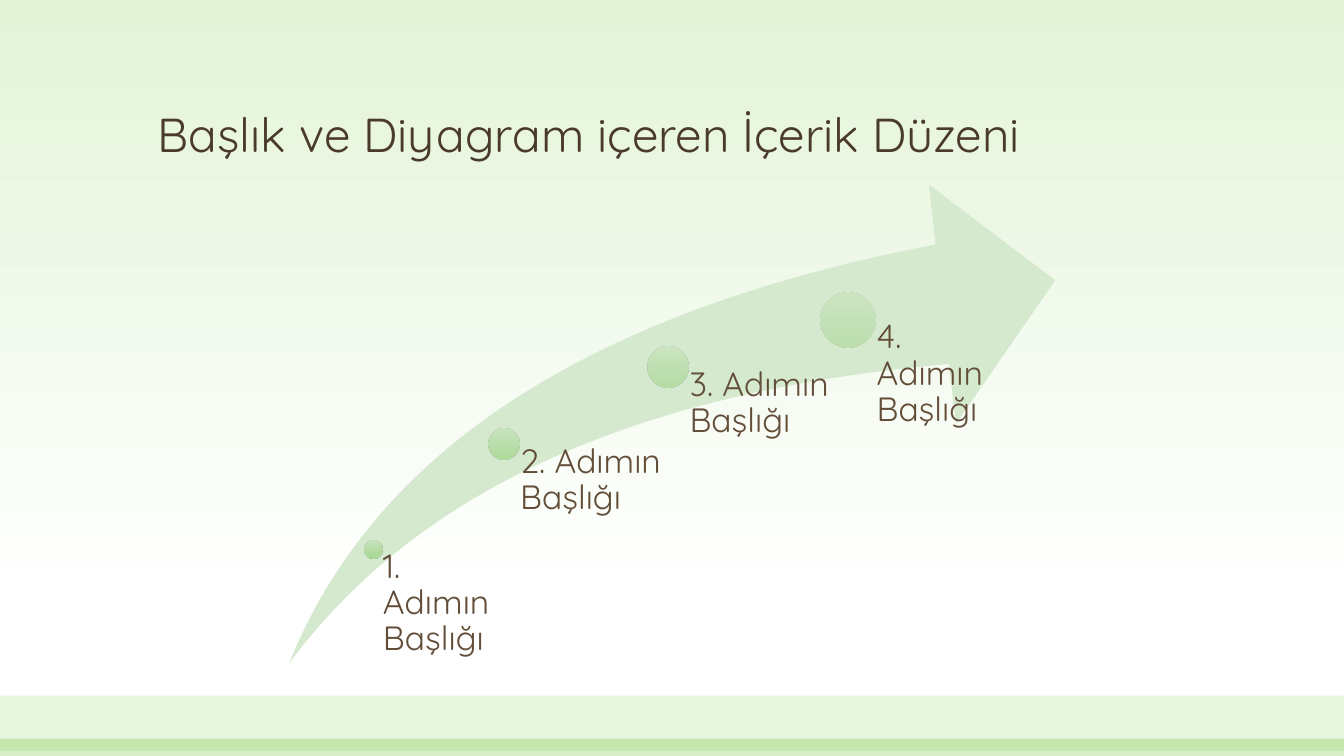
"""Builds a slide with a rising arrow that carries four step headings."""
import copy

import pptx
import pptx.dml.color
import pptx.enum.shapes
import pptx.enum.text
import pptx.oxml.ns
import pptx.util
from lxml import etree

Pt = pptx.util.Pt
RGBColor = pptx.dml.color.RGBColor
SHAPE = pptx.enum.shapes.MSO_SHAPE
ANCHOR = pptx.enum.text.MSO_ANCHOR
qn = pptx.oxml.ns.qn

FONT = "Quicksand"
TITLE_BROWN = RGBColor(0x4A, 0x3A, 0x2A)
STEP_BROWN = RGBColor(0x62, 0x4D, 0x38)
BAND_GREEN = RGBColor(0x72, 0xC2, 0x3C)
ARROW_GREEN = RGBColor(0xD5, 0xE9, 0xCE)
SKY_GREEN = RGBColor(0xE3, 0xF3, 0xD8)
WHITE = RGBColor(0xFF, 0xFF, 0xFF)
DOT_GREENS = [RGBColor(0xC8, 0xE5, 0xBC), RGBColor(0xB3, 0xDB, 0xA2), RGBColor(0xA4, 0xD7, 0x8D)]

TITLE = "Başlık ve Diyagram içeren İçerik Düzeni"
BANDS = [(496.8, 39.6, 17), (527.8, 12.2, 28)]
ARROW = (206.6, 131.8, 547.2, 342)
STEPS = [
    ("1. Adımın Başlığı", 266.9, 392.3, 12.6, 90, 93.6),
    ("2. Adımın Başlığı", 360, 317.2, 21.9, 77, 115.2),
    ("3. Adımın Başlığı", 477.2, 262.4, 29, 63, 115.2),
    ("4. Adımın Başlığı", 605.6, 228.4, 38.9, 50, 115.2),
]
INSET_RATIO = 0.53


def set_alpha(color_element, percent):
    alpha = etree.SubElement(color_element, qn("a:alpha"))
    alpha.set("val", str(percent * 1000))


def set_gradient(fill, stops, percent=100):
    fill.gradient()
    fill.gradient_angle = 270
    stop_list = fill._xPr.find(qn("a:gradFill")).find(qn("a:gsLst"))
    for _ in stops[2:]:
        stop_list.append(copy.deepcopy(stop_list[-1]))
    for stop, (position, color) in zip(fill.gradient_stops, stops):
        stop.position = position
        stop.color.rgb = color
    if percent < 100:
        for color_element in stop_list.iter(qn("a:srgbClr")):
            set_alpha(color_element, percent)


def add_plain_shape(page, kind, left, top, width, height):
    shape = page.shapes.add_shape(kind, Pt(left), Pt(top), Pt(width), Pt(height))
    shape.shadow.inherit = False
    shape.line.fill.background()
    return shape


def set_solid(shape, color, percent=100):
    shape.fill.solid()
    shape.fill.fore_color.rgb = color
    if percent < 100:
        set_alpha(shape._element.spPr.find(".//" + qn("a:srgbClr")), percent)


def add_text(page, text, area, size, color, insets, anchor):
    box = page.shapes.add_textbox(*map(Pt, area))
    frame = box.text_frame
    frame.word_wrap = True
    frame.vertical_anchor = anchor
    frame.margin_left, frame.margin_top, frame.margin_right, frame.margin_bottom = map(Pt, insets)
    frame.text = text
    para = frame.paragraphs[0]
    para.line_spacing = 0.9
    span = para.runs[0]
    span.font.name = FONT
    span.font.size = Pt(size)
    span.font.color.rgb = color


def main():
    deck = pptx.Presentation()
    deck.slide_width, deck.slide_height = Pt(960), Pt(540)
    page = deck.slides.add_slide(deck.slide_layouts[6])
    set_gradient(page.background.fill, [(0, SKY_GREEN), (0.79, WHITE)])

    for top, height, percent in BANDS:
        band = add_plain_shape(page, SHAPE.RECTANGLE, 0, top, 960, height)
        set_solid(band, BAND_GREEN, percent)

    add_text(page, TITLE, (105.8, 34.2, 748.8, 85.7), 34, TITLE_BROWN,
             (7.2, 3.6, 7.2, 3.6), ANCHOR.BOTTOM)

    arrow = add_plain_shape(page, SHAPE.SWOOSH_ARROW, *ARROW)
    arrow.adjustments[0] = arrow.adjustments[1] = 0.25
    set_solid(arrow, ARROW_GREEN)

    text_bottom = ARROW[1] + ARROW[3]
    for heading, center_x, center_y, diameter, percent, width in STEPS:
        radius = diameter / 2
        dot = add_plain_shape(page, SHAPE.OVAL, center_x - radius, center_y - radius,
                              diameter, diameter)
        set_gradient(dot.fill, list(zip((0, 0.5, 1), DOT_GREENS)), percent)
        add_text(page, heading, (center_x, center_y, width, text_bottom - center_y), 24,
                 STEP_BROWN, (diameter * INSET_RATIO, 0, 0, 0), ANCHOR.TOP)

    deck.save("out.pptx")


if __name__ == "__main__":
    main()
